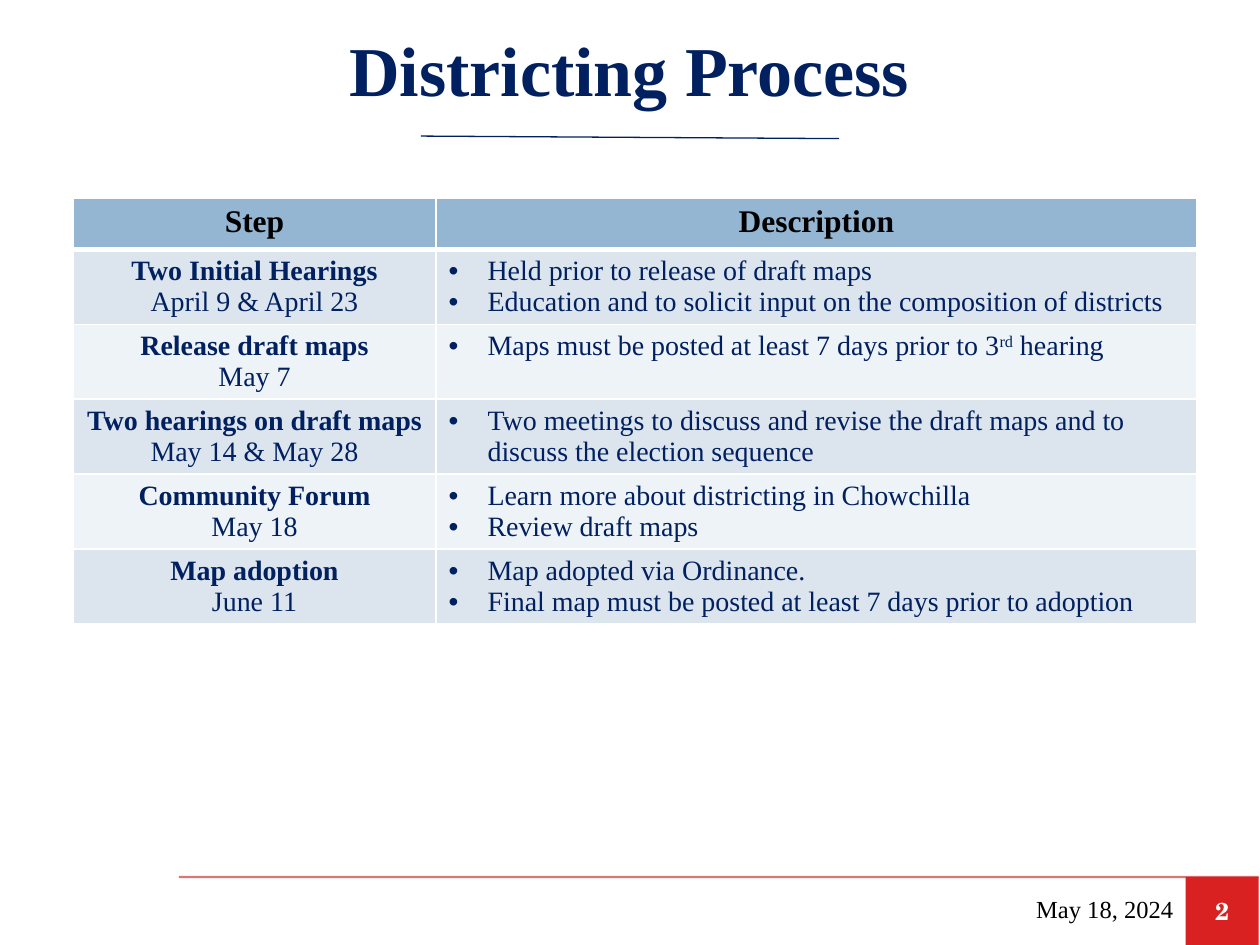
from dataclasses import dataclass

from lxml import etree
from pptx import Presentation
from pptx.dml.color import RGBColor
from pptx.enum.shapes import MSO_CONNECTOR, MSO_SHAPE
from pptx.enum.text import MSO_ANCHOR, PP_ALIGN
from pptx.oxml.ns import qn
from pptx.util import Inches, Pt

CENTER, LEFT, RIGHT = PP_ALIGN.CENTER, PP_ALIGN.LEFT, PP_ALIGN.RIGHT
MIDDLE = MSO_ANCHOR.MIDDLE
RECT = MSO_SHAPE.RECTANGLE
STRAIGHT = MSO_CONNECTOR.STRAIGHT


@dataclass(frozen=True)
class Theme:
    """Colours, fonts and type sizes of the slide."""
    navy: str = "002060"
    black: str = "000000"
    white: str = "FFFFFF"
    red: str = "D92121"
    rule: str = "C80000"
    header: str = "94B6D2"
    bands: tuple = ("DCE5EE", "EEF3F7")
    serif: str = "Times New Roman"
    number: str = "TeX Gyre Schola"
    title_size: int = 40
    header_size: int = 18
    body_size: int = 16
    footer_size: int = 14


T = Theme()
STEPS = [
    (("Two Initial Hearings", "April 9 & April 23"),
     (("Held prior to release of draft maps",),
      ("Education and to solicit input on the composition of districts",))),
    (("Release draft maps", "May 7"),
     (("Maps must be posted at least 7 days prior to 3", "rd", " hearing"),)),
    (("Two hearings on draft maps", "May 14 & May 28"),
     (("Two meetings to discuss and revise the draft maps and to "
       "discuss the election sequence",),)),
    (("Community Forum", "May 18"),
     (("Learn more about districting in Chowchilla",),
      ("Review draft maps",))),
    (("Map adoption", "June 11"),
     (("Map adopted via Ordinance.",),
      ("Final map must be posted at least 7 days prior to adoption",))),
]


def add_run(p, text, size, color, bold=False, name=T.serif):
    """Append a formatted run to a paragraph and return it."""
    r = p.add_run()
    r.text = text
    for key, value in {"size": Pt(size), "bold": bold, "name": name}.items():
        setattr(r.font, key, value)
    r.font.color.rgb = RGBColor.from_string(color)
    return r


def add_line(s, start, end, color, width, alpha=None):
    """Draw a straight shadowless line, optionally translucent."""
    line = s.shapes.add_connector(STRAIGHT, *map(Inches, start + end))
    line.line.color.rgb = RGBColor.from_string(color)
    line.line.width = Pt(width)
    sp_pr = line._element.spPr
    if alpha:
        clr = next(sp_pr.iter(qn("a:srgbClr")))
        etree.SubElement(clr, qn("a:alpha"), val=str(alpha * 1000))
    etree.SubElement(sp_pr, qn("a:effectLst"))


def add_title(s, text):
    """Place and fill the title placeholder."""
    sp = s.shapes.title
    box = {"left": 0.37, "top": 0, "width": 9.25, "height": 1.08}
    for key, value in box.items():
        setattr(sp, key, Inches(value))
    tf = sp.text_frame
    tf.vertical_anchor = MIDDLE
    p = tf.paragraphs[0]
    p.alignment = CENTER
    add_run(p, text, T.title_size, T.navy, True)


def add_badge(s, text):
    """Add the red page number block."""
    sp = s.shapes.add_shape(RECT, *map(Inches, (9.41, 6.96, 0.58, 0.54)))
    sp.shadow.inherit = False
    sp.fill.solid()
    sp.fill.fore_color.rgb = RGBColor.from_string(T.red)
    sp.line.fill.background()
    tf = sp.text_frame
    tf.vertical_anchor = MIDDLE
    p = tf.paragraphs[0]
    p.alignment = CENTER
    add_run(p, text, T.footer_size, T.white, True, T.number)


def add_date(s, text):
    """Add the right-aligned footer date."""
    tf = s.shapes.add_textbox(*map(Inches, (6.49, 7.01, 2.92, 0.4))).text_frame
    tf.word_wrap = True
    tf.vertical_anchor = MIDDLE
    p = tf.paragraphs[0]
    p.alignment = RIGHT
    add_run(p, text, T.footer_size, T.black)


def style_cell(cell, fill, top=1, bottom=1):
    """Set the fill and white borders of a cell."""
    cell.fill.solid()
    cell.fill.fore_color.rgb = RGBColor.from_string(fill)
    tc_pr = cell._tc.get_or_add_tcPr()
    widths = {"a:lnL": 1, "a:lnR": 1, "a:lnT": top, "a:lnB": bottom}
    for i, (tag, width) in enumerate(widths.items()):
        ln = etree.Element(qn(tag), w=str(Pt(width)))
        solid = etree.SubElement(ln, qn("a:solidFill"))
        etree.SubElement(solid, qn("a:srgbClr"), val=T.white)
        tc_pr.insert(i, ln)


def cell_paragraphs(cell, count):
    """Return the given number of paragraphs in a cell."""
    tf = cell.text_frame
    return [tf.paragraphs[0]] + [tf.add_paragraph() for _ in range(count - 1)]


def add_bullet(p):
    """Give a paragraph a hanging round bullet."""
    p.alignment = LEFT
    p_pr = p._p.get_or_add_pPr()
    indent = Inches(0.31)
    p_pr.set("marL", str(indent))
    p_pr.set("indent", str(-indent))
    etree.SubElement(p_pr, qn("a:buFont"), typeface="Arial")
    etree.SubElement(p_pr, qn("a:buChar"), char="•")


def fill_step(cell, lines):
    """Write a bold step name above its date."""
    for i, (p, text) in enumerate(zip(cell_paragraphs(cell, len(lines)), lines)):
        p.alignment = CENTER
        add_run(p, text, T.body_size, T.navy, i == 0)


def fill_description(cell, items):
    """Write bullets whose second run, if any, is superscript."""
    for p, parts in zip(cell_paragraphs(cell, len(items)), items):
        add_bullet(p)
        for i, text in enumerate(parts):
            r = add_run(p, text, T.body_size, T.navy)
            if i == 1:
                r._r.get_or_add_rPr().set("baseline", "30000")


def add_steps_table(s, headings, steps):
    """Add the banded table of steps and descriptions."""
    rows, row_height = len(steps) + 1, 0.41
    box = map(Inches, (0.58, 1.57, 8.92, rows * row_height))
    table = s.shapes.add_table(rows, len(headings), *box).table
    for column, width in zip(table.columns, (2.88, 6.04)):
        column.width = Inches(width)
    for cell, text in zip(table.rows[0].cells, headings):
        style_cell(cell, T.header, bottom=3)
        p = cell.text_frame.paragraphs[0]
        p.alignment = CENTER
        add_run(p, text, T.header_size, T.black, True)
    for i, (step, description) in enumerate(steps):
        cells = list(table.rows[i + 1].cells)
        for cell in cells:
            style_cell(cell, T.bands[i % 2], top=1 if i else 3)
        fill_step(cells[0], step)
        fill_description(cells[1], description)


def main():
    """Build and save the slide."""
    prs = Presentation()
    prs.slide_width, prs.slide_height = Inches(10), Inches(7.5)
    s = prs.slides.add_slide(prs.slide_layouts[5])
    add_line(s, (1.42, 6.96), (9.99, 6.96), T.rule, 1.25, 55)
    add_title(s, "Districting Process")
    add_badge(s, "2")
    add_line(s, (3.34, 1.08), (6.66, 1.1), T.navy, 0.75)
    add_steps_table(s, ("Step", "Description"), STEPS)
    add_date(s, "May 18, 2024")
    prs.save("out.pptx")


if __name__ == "__main__":
    main()
